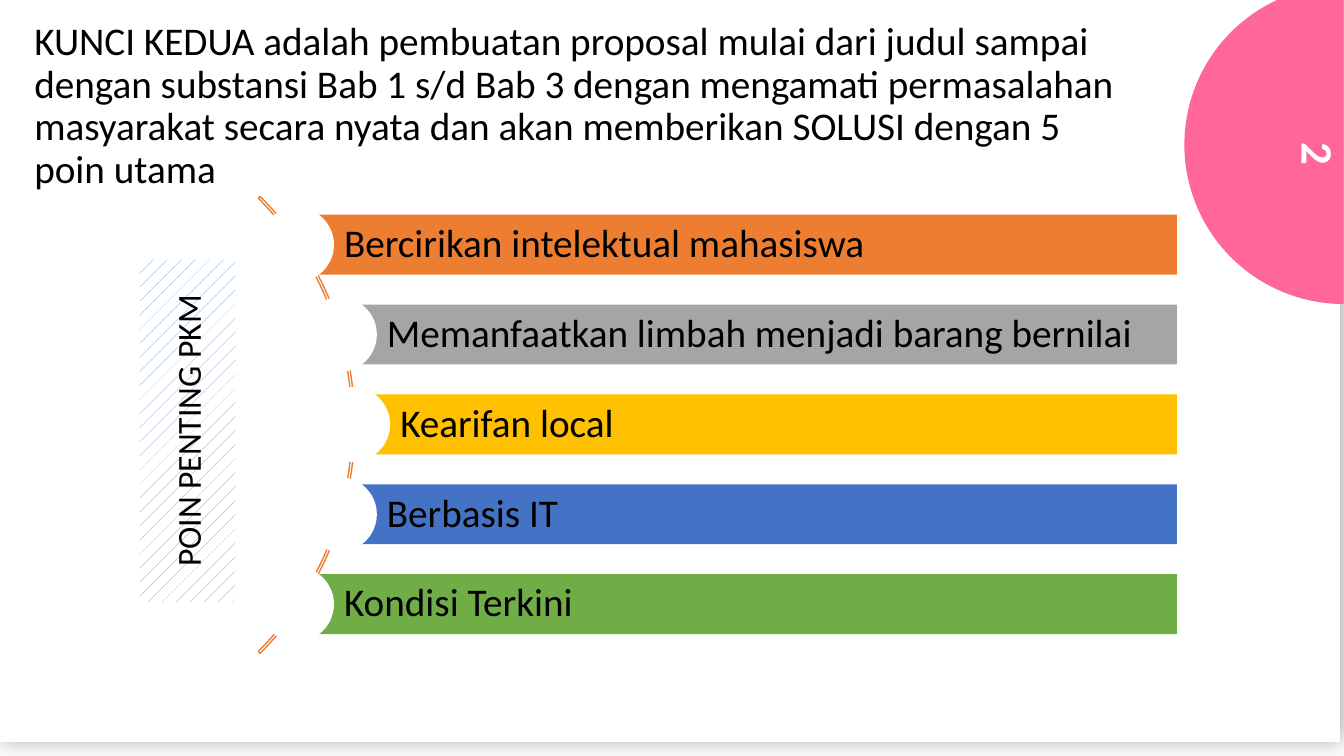
import math

from lxml import etree
from pptx import Presentation
from pptx.dml.color import RGBColor
from pptx.enum.dml import MSO_PATTERN
from pptx.enum.shapes import MSO_SHAPE
from pptx.enum.text import MSO_ANCHOR, PP_ALIGN
from pptx.oxml import parse_xml
from pptx.oxml.ns import qn
from pptx.util import Pt

RECTANGLE, OVAL, ARC = MSO_SHAPE.RECTANGLE, MSO_SHAPE.OVAL, MSO_SHAPE.BLOCK_ARC
DOTS = MSO_PATTERN.PERCENT_5
TOP, MIDDLE = MSO_ANCHOR.TOP, MSO_ANCHOR.MIDDLE
LEFT, CENTER = PP_ALIGN.LEFT, PP_ALIGN.CENTER

FONT = "Calibri"
INTRO = (
    "KUNCI KEDUA adalah pembuatan proposal mulai dari judul sampai dengan "
    "substansi Bab 1 s/d Bab 3 dengan mengamati permasalahan masyarakat secara "
    "nyata dan akan memberikan SOLUSI dengan 5 poin utama"
)
POINTS = [
    ("Bercirikan intelektual mahasiswa", "ED7D31", 211.9),
    ("Memanfaatkan limbah menjadi barang bernilai", "A5A5A5", 242.5),
    ("Kearifan local", "FFC000", 252),
    ("Berbasis IT", "4472C4", 242.5),
    ("Kondisi Terkini", "70AD47", 211.9),
]
BAR_TOP, BAR_STEP, BAR_HEIGHT, BAR_RIGHT = 153.4, 64.2, 42.8, 840.6
KNOB = 53.4
SHADOW = (
    '<a:effectLst xmlns:a="http://schemas.openxmlformats.org/drawingml/2006/main">'
    '<a:outerShdw blurRad="215900" dist="38100" dir="0">'
    '<a:srgbClr val="000000"><a:alpha val="35000"/></a:srgbClr>'
    "</a:outerShdw></a:effectLst>"
)


def color(code):
    return RGBColor.from_string(code)


def paint(shape, fill=None, line=None):
    shape.shadow.inherit = False
    if fill:
        shape.fill.solid()
        shape.fill.fore_color.rgb = color(fill)
    else:
        shape.fill.background()
    if line:
        shape.line.color.rgb = color(line)
        shape.line.width = Pt(1)
    else:
        shape.line.fill.background()


def add_shape(slide, kind, left, top, width, height, fill=None, line=None):
    shape = slide.shapes.add_shape(kind, Pt(left), Pt(top), Pt(width), Pt(height))
    paint(shape, fill, line)
    return shape


def write(shape, text, size=28, ink="000000", bold=False, align=LEFT,
          anchor=MIDDLE, spacing=1.0, before=0, inset=None):
    frame = shape.text_frame
    frame.word_wrap = True
    frame.vertical_anchor = anchor
    if inset:
        frame.margin_left = Pt(inset)
        frame.margin_top = frame.margin_right = frame.margin_bottom = Pt(5.6)
    para = frame.paragraphs[0]
    para.alignment = align
    para.line_spacing = spacing
    para.space_before = Pt(before)
    span = para.add_run()
    span.text = text
    span.font.name = FONT
    span.font.size = Pt(size)
    span.font.bold = bold
    span.font.color.rgb = color(ink)


def add_page(slide, body):
    """Put a white sheet with a soft shadow behind the body text."""
    page = add_shape(slide, RECTANGLE, -2.9, -10.1, 960, 540, "FFFFFF")
    properties = page.element.spPr
    properties.replace(properties.find(qn("a:effectLst")), parse_xml(SHADOW))
    body.element.addprevious(page.element)


def write_intro(body):
    body.left, body.top, body.width, body.height = Pt(17.3), Pt(12.2), Pt(801.4), Pt(470.9)
    write(body, INTRO, anchor=TOP, spacing=0.9, before=10)
    properties = body.text_frame.paragraphs[0].element_properties \
        if hasattr(body.text_frame.paragraphs[0], "element_properties") \
        else body.element.find(".//" + qn("a:pPr"))
    properties.set("marL", "0")
    properties.set("indent", "0")
    etree.SubElement(properties, qn("a:buNone"))


def add_arc(slide):
    arc = add_shape(slide, ARC, -208.1, 72.7, 461.5, 461.5, line="ED7D31")
    for index, value in enumerate((189, 27, 0.004)):
        arc.adjustments[index] = value


def add_point(slide, row, text, fill, left):
    top = BAR_TOP + row * BAR_STEP
    bar = add_shape(slide, RECTANGLE, left, top, BAR_RIGHT - left, BAR_HEIGHT, fill)
    write(bar, text, spacing=0.9, inset=33.9)
    knob_top = top + (BAR_HEIGHT - KNOB) / 2
    add_shape(slide, OVAL, left - KNOB / 2, knob_top, KNOB, KNOB, "FFFFFF")


def add_side_label(slide):
    label = add_shape(slide, RECTANGLE, 11.5, 273.6, 244.8, 68.4)
    label.rotation = 270
    label.fill.patterned()
    label.fill.pattern = DOTS
    label.fill.fore_color.rgb = color("5B9BD5")
    label.fill.back_color.rgb = color("FFFFFF")
    write(label, "POIN PENTING PKM", size=24, align=CENTER)


def add_half_disc(slide, center_x=959.8, center_y=103.4, radius=113.8):
    outline = [
        (Pt(center_x + radius * math.cos(math.radians(angle))),
         Pt(center_y + radius * math.sin(math.radians(angle))))
        for angle in range(90, 271, 2)
    ]
    builder = slide.shapes.build_freeform(*outline[0])
    builder.add_line_segments(outline[1:], close=True)
    paint(builder.convert_to_shape(), "FF6699")


def add_page_number(slide):
    box = slide.shapes.add_textbox(Pt(861.1), Pt(92.2), Pt(162.7), Pt(35.3))
    box.rotation = 90
    write(box, "2", size=32, ink="FFFFFF", bold=True, align=CENTER)


def main():
    deck = Presentation()
    deck.slide_width, deck.slide_height = Pt(960), Pt(540)
    slide = deck.slides.add_slide(deck.slide_layouts[1])
    title, body = slide.placeholders
    title.element.getparent().remove(title.element)
    add_page(slide, body)
    write_intro(body)
    add_arc(slide)
    for row, point in enumerate(POINTS):
        add_point(slide, row, *point)
    add_side_label(slide)
    add_half_disc(slide)
    add_page_number(slide)
    deck.save("out.pptx")


if __name__ == "__main__":
    main()
